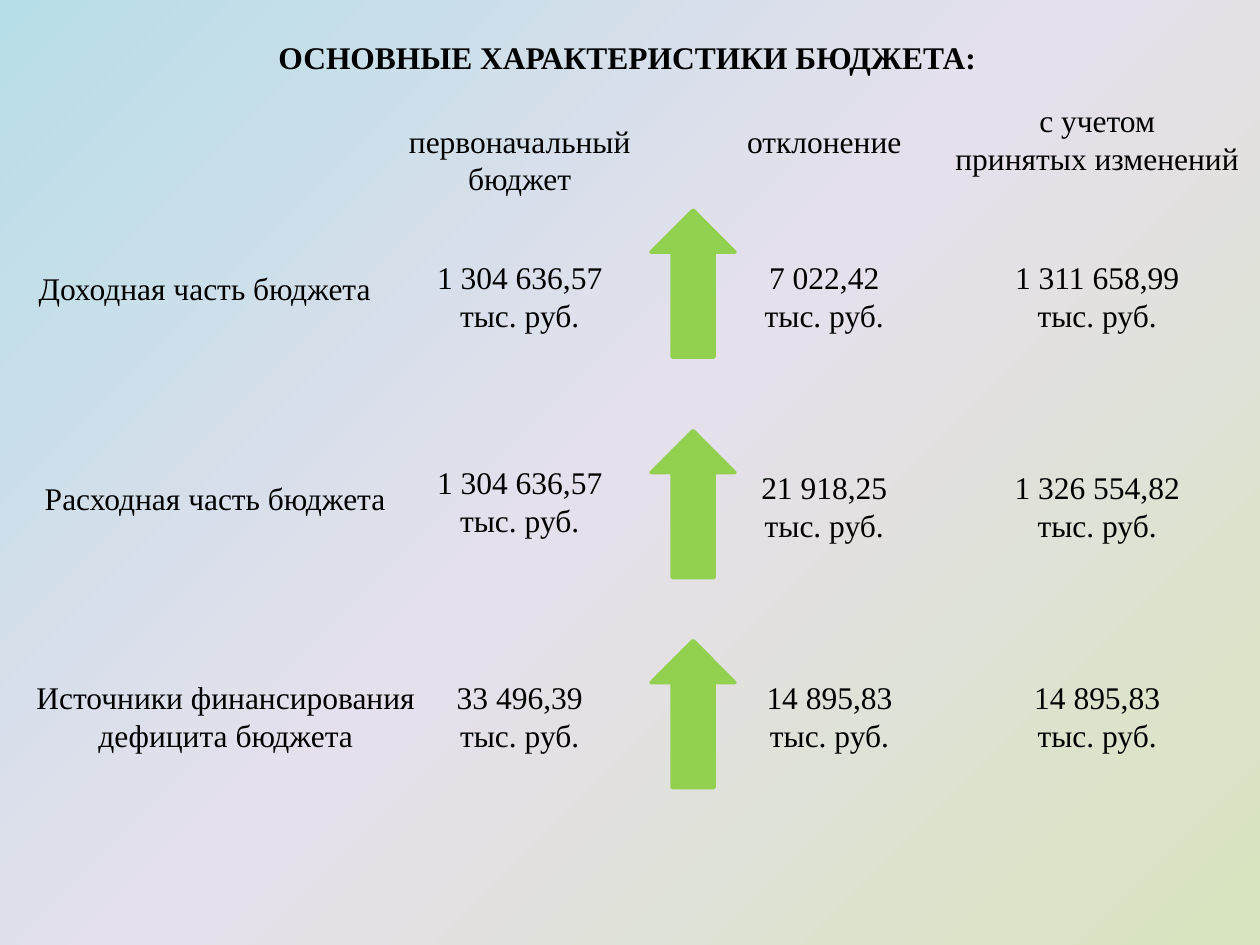
from dataclasses import dataclass

from pptx import Presentation
from pptx.dml.color import RGBColor as Rgb
from pptx.enum.shapes import MSO_SHAPE as Kind
from pptx.enum.text import MSO_AUTO_SIZE as Fit, PP_ALIGN as Align
from pptx.oxml import parse_xml
from pptx.oxml.ns import nsdecls
from pptx.util import Pt


@dataclass(frozen=True)
class Theme:
    """Colours and type of the slide."""
    font: str = "Times New Roman"
    size: int = 18
    ink: str = "000000"
    arrow: str = "92D050"
    edge: int = 2
    back: tuple = ("D7E4BD", "E6E0EC", "B7DEE8")


THEME = Theme()
ONE, TWO = 29, 51

HEADS = [
    (198, 66, 198, TWO, ["первоначальный бюджет"]),
    (414, 66, 114, ONE, ["отклонение"]),
    (534, 54, 186, TWO, ["с учетом", "принятых изменений"]),
]

LABELS = [
    (12, 150, 210, ONE, ["Доходная часть бюджета"]),
    (18, 270, 210, ONE, ["Расходная часть бюджета"]),
    (12, 384, 234, TWO, ["Источники финансирования дефицита бюджета"]),
]

SUMS = [
    (240, 144, 114, TWO, ["1 304 636,57 тыс. руб."]),
    (426, 144, 90, TWO, ["7 022,42 тыс. руб."]),
    (558, 144, 138, TWO, ["1 311 658,99 тыс. руб."]),
    (240, 261, 114, TWO, ["1 304 636,57 тыс. руб."]),
    (426, 264, 90, TWO, ["21 918,25 тыс. руб."]),
    (570, 264, 114, TWO, ["1 326 554,82 тыс. руб."]),
    (240, 384, 114, TWO, ["33 496,39", "тыс. руб."]),
    (426, 384, 96, TWO, ["14 895,83", "тыс. руб."]),
    (570, 384, 114, TWO, ["14 895,83", "тыс. руб."]),
]

ARROWS = (120, 246, 366)


def paint(slide):
    """Fill the background with a gradient spreading from the lower right."""
    stops = "".join(
        f'<a:gs pos="{i * 50000}"><a:srgbClr val="{tint}"/></a:gs>'
        for i, tint in enumerate(THEME.back))
    back = parse_xml(
        f'<p:bg {nsdecls("p", "a")}><p:bgPr><a:gradFill rotWithShape="1">'
        f'<a:gsLst>{stops}</a:gsLst><a:path path="circle">'
        '<a:fillToRect l="100000" t="100000"/></a:path>'
        '<a:tileRect r="-100000" b="-100000"/></a:gradFill>'
        '<a:effectLst/></p:bgPr></p:bg>')
    slide.element.cSld.insert(0, back)


def write(slide, left, top, width, height, lines, bold=False, wrap=True):
    """Add a centred text box with one paragraph per line."""
    box = slide.shapes.add_textbox(Pt(left), Pt(top), Pt(width), Pt(height))
    frame = box.text_frame
    frame.word_wrap = wrap
    frame.auto_size = Fit.SHAPE_TO_FIT_TEXT
    for i, line in enumerate(lines):
        para = frame.add_paragraph() if i else frame.paragraphs[0]
        para.alignment = Align.CENTER
        run = para.add_run()
        run.text = line
        font = run.font
        font.name = THEME.font
        font.size = Pt(THEME.size)
        font.bold = bold
        font.color.rgb = Rgb.from_string(THEME.ink)


def point(slide, top):
    """Add a green arrow that points up."""
    arrow = slide.shapes.add_shape(
        Kind.DOWN_ARROW, Pt(372), Pt(top), Pt(48), Pt(84))
    arrow.rotation = 180
    arrow.shadow.inherit = False
    tint = Rgb.from_string(THEME.arrow)
    arrow.fill.solid()
    arrow.fill.fore_color.rgb = tint
    arrow.line.color.rgb = tint
    arrow.line.width = Pt(THEME.edge)


def main():
    """Build the budget slide and save it."""
    deck = Presentation()
    deck.slide_width, deck.slide_height = Pt(720), Pt(540)
    slide = deck.slides.add_slide(deck.slide_layouts[6])
    paint(slide)
    for top in ARROWS:
        point(slide, top)
    for item in LABELS + SUMS + HEADS:
        write(slide, *item)
    write(slide, 150, 18, 417, ONE, ["ОСНОВНЫЕ ХАРАКТЕРИСТИКИ БЮДЖЕТА:"],
          bold=True, wrap=False)
    deck.save("out.pptx")


if __name__ == "__main__":
    main()
